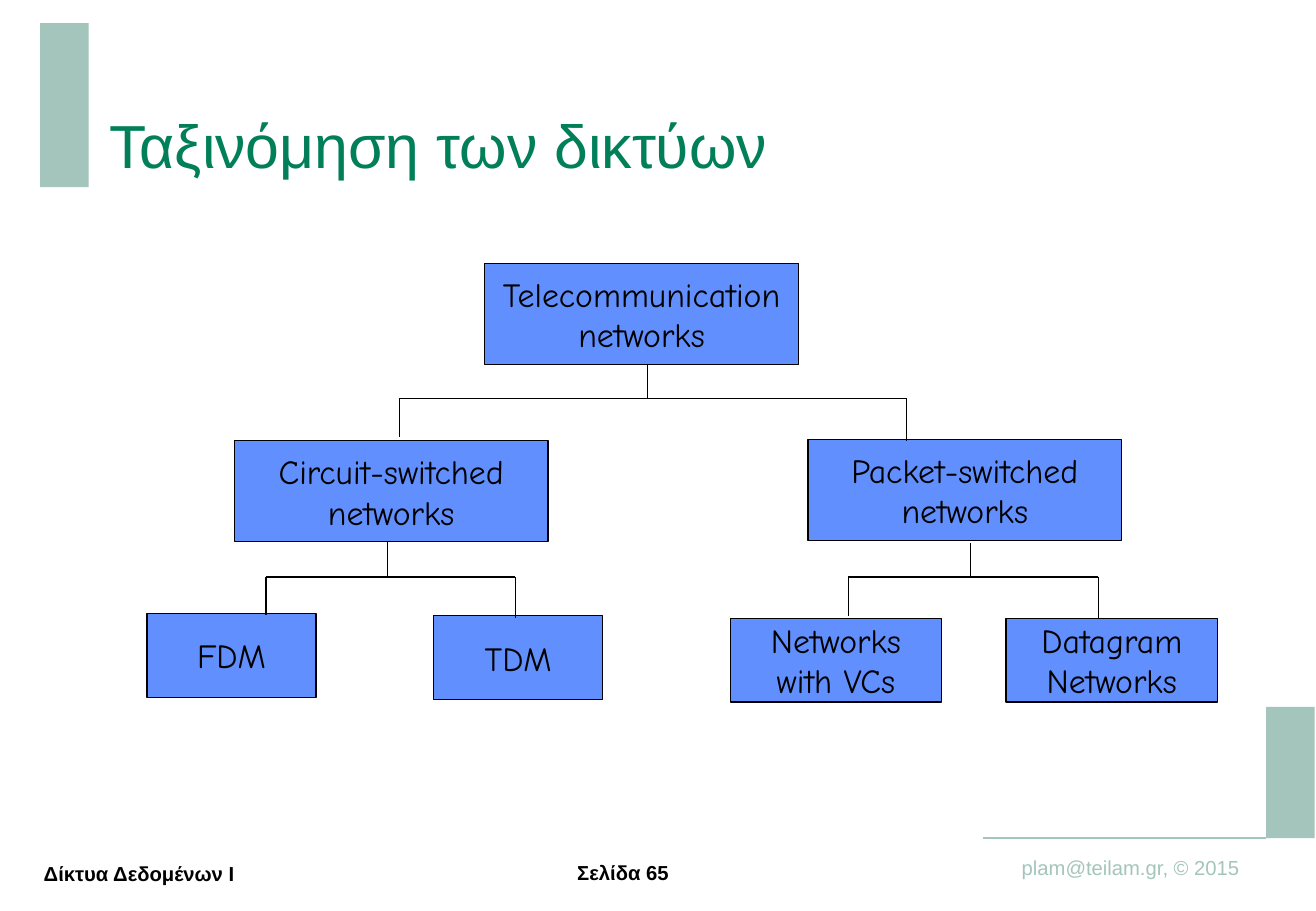
from lxml.etree import SubElement
from pptx import Presentation
from pptx.dml.color import RGBColor
from pptx.enum.shapes import MSO_CONNECTOR, MSO_SHAPE
from pptx.enum.text import MSO_ANCHOR, PP_ALIGN
from pptx.oxml.ns import qn
from pptx.util import Inches, Pt

GREEN, SAGE, BLUE, BLACK = "007F59", "A3C5BB", "618FFD", "000000"

TITLE = "Ταξινόμηση των δικτύων"
ACCENT_BARS = [(0.33, 0.19, 0.4, 1.35), (10.42, 5.82, 0.4, 1.08)]

# Text, position, wrap, margins, format
FOOTERS = [
    ("Σελίδα 65", (4.75, 7.08, 1.02, 0.2), True, (0, 0),
     dict(bold=True, anchor=MSO_ANCHOR.MIDDLE)),
    ("plam@teilam.gr, © 2015", (8.31, 6.99, 2.01, 0.3), False, (0.1, 0.05),
     dict(color=SAGE)),
    ("Δίκτυα Δεδομένων Ι", (0.22, 6.9, 1.85, 0.58), False, (0.1, 0.05),
     dict(bold=True, anchor=MSO_ANCHOR.MIDDLE, align=PP_ALIGN.CENTER)),
]

# Box sizes by level, then the boxes: text, left, top, size
NETWORK, MULTIPLEXING, PACKET = (2.58, 0.83), (1.39, 0.69), (1.74, 0.69)
BOXES = [
    ("Telecommunication\nnetworks", 3.99, 2.17, NETWORK),
    ("Circuit-switched\nnetworks", 1.93, 3.63, NETWORK),
    ("Packet-switched\nnetworks", 6.65, 3.62, NETWORK),
    ("FDM", 1.21, 5.05, MULTIPLEXING),
    ("TDM", 3.57, 5.07, MULTIPLEXING),
    ("Networks\nwith VCs", 6.01, 5.09, PACKET),
    ("Datagram\nNetworks", 8.28, 5.09, PACKET),
]

# Forks: stem x, stem top, bar y, left x, left end, right x, right end
FORKS = [
    (5.33, 3.0, 3.28, 3.29, 3.6, 7.46, 3.63),
    (3.19, 4.46, 4.75, 2.19, 5.06, 4.24, 5.09),
    (7.99, 4.47, 4.75, 6.98, 5.07, 9.04, 5.09),
]


def rgb(color):
    return RGBColor.from_string(color)


def write(frame, text, size=12, font="Arial", color=BLACK, bold=False,
          align=PP_ALIGN.LEFT, anchor=MSO_ANCHOR.TOP, wrap=True, margins=(0.1, 0.05)):
    frame.word_wrap = wrap
    frame.vertical_anchor = anchor
    frame.margin_left = frame.margin_right = Inches(margins[0])
    frame.margin_top = frame.margin_bottom = Inches(margins[1])
    for index, line in enumerate(text.split("\n")):
        para = frame.paragraphs[0] if index == 0 else frame.add_paragraph()
        para.alignment = align
        span = para.add_run()
        span.text = line
        span.font.size, span.font.name, span.font.bold = Pt(size), font, bold
        span.font.color.rgb = rgb(color)


def add_rectangle(page, place, fill, outline=None):
    box = page.shapes.add_shape(MSO_SHAPE.RECTANGLE, *map(Inches, place))
    box.shadow.inherit = False
    box.fill.solid()
    box.fill.fore_color.rgb = rgb(fill)
    if outline:
        box.line.color.rgb = rgb(outline)
        box.line.width = Pt(0.75)
    else:
        box.line.fill.background()
    return box


def add_line(page, start, end, color=BLACK, width=0.75):
    line = page.shapes.add_connector(MSO_CONNECTOR.STRAIGHT, *map(Inches, start + end))
    line.line.color.rgb = rgb(color)
    line.line.width = Pt(width)
    SubElement(line._element.spPr, qn("a:effectLst"))


def main():
    deck = Presentation()
    deck.slide_width, deck.slide_height = Inches(10.83), Inches(7.5)
    page = deck.slides.add_slide(deck.slide_layouts[5])

    # Frame: accent bars, footer rule and footer texts
    for place in ACCENT_BARS:
        add_rectangle(page, place, SAGE)
    add_line(page, (8.09, 6.9), (10.42, 6.9), SAGE, 1)
    for text, place, wrap, margins, style in FOOTERS:
        box = page.shapes.add_textbox(*map(Inches, place))
        write(box.text_frame, text, wrap=wrap, margins=margins, **style)

    # Title
    title = page.shapes.title
    title.left, title.top, title.width, title.height = map(Inches, (0.9, 0.19, 9.52, 1.35))
    write(title.text_frame, TITLE, size=36, color=GREEN,
          anchor=MSO_ANCHOR.BOTTOM, margins=(0, 0.05))

    # Tree boxes
    for text, left, top, size in BOXES:
        box = add_rectangle(page, (left, top, *size), BLUE, BLACK)
        write(box.text_frame, text, size=20, font="Comic Neue", wrap=False,
              align=PP_ALIGN.CENTER, anchor=MSO_ANCHOR.MIDDLE)

    # Tree branches
    for stem, top, bar, left, left_end, right, right_end in FORKS:
        add_line(page, (stem, top), (stem, bar))
        add_line(page, (left, bar), (right, bar))
        add_line(page, (left, bar), (left, left_end))
        add_line(page, (right, bar), (right, right_end))

    deck.save("out.pptx")


if __name__ == "__main__":
    main()
